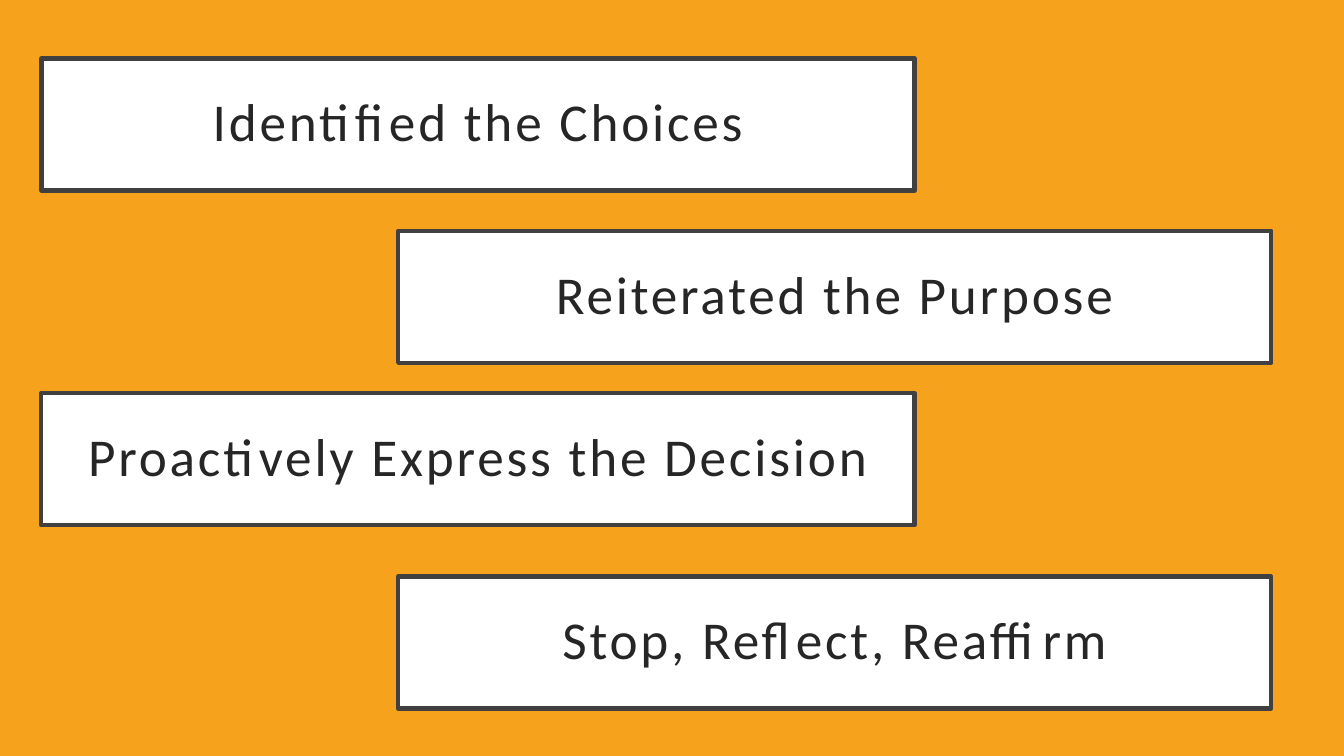
from pptx import Presentation
from pptx.dml.color import RGBColor
from pptx.enum.shapes import MSO_SHAPE
from pptx.enum.text import MSO_ANCHOR, MSO_AUTO_SIZE, PP_ALIGN
from pptx.util import Inches, Pt

ORANGE = RGBColor(0xF6, 0xA2, 0x1D)
WHITE = RGBColor(0xFF, 0xFF, 0xFF)
CHARCOAL = RGBColor(0x40, 0x40, 0x40)
INK = RGBColor(0x26, 0x26, 0x26)

LEFT_COLUMN, RIGHT_COLUMN = 3.08, 29.63
BOX_COLUMNS, BOX_ROWS = 64.97, 17.47
TITLE = ("Identified the Choices", LEFT_COLUMN, 7.73)
STEPS = [
    ("Reiterated the Purpose", RIGHT_COLUMN, 30.53),
    ("Proactively Express the Decision", LEFT_COLUMN, 52),
    ("Stop, Reflect, Reaffirm", RIGHT_COLUMN, 76.27),
]


class StepPage:
    """Draws outlined step boxes on a page grid of 100 columns by 100 rows."""

    def __init__(self, deck):
        """Add a title-only page with an orange background."""
        self.column = deck.slide_width / 100
        self.row = deck.slide_height / 100
        self.page = deck.slides.add_slide(deck.slide_layouts[5])
        self.page.background.fill.solid()
        self.page.background.fill.fore_color.rgb = ORANGE

    def title(self, text, column, row):
        """Place and format the title placeholder."""
        self.format_box(self.page.shapes.title, text, column, row)

    def step(self, text, column, row):
        """Add a step rectangle."""
        box = self.page.shapes.add_shape(MSO_SHAPE.RECTANGLE, 0, 0, 0, 0)
        box.shadow.inherit = False
        self.format_box(box, text, column, row)

    def format_box(self, box, text, column, row):
        """Give a box its place, outline and text."""
        box.left, box.top = round(column * self.column), round(row * self.row)
        box.width = round(BOX_COLUMNS * self.column)
        box.height = round(BOX_ROWS * self.row)
        box.fill.solid()
        box.fill.fore_color.rgb = WHITE
        box.line.color.rgb = CHARCOAL
        box.line.width = Pt(3)
        self.format_text(box.text_frame, text)

    def format_text(self, frame, text):
        """Set one centred, letter-spaced paragraph."""
        frame.text = text
        frame.word_wrap = True
        frame.auto_size = MSO_AUTO_SIZE.NONE
        frame.vertical_anchor = MSO_ANCHOR.MIDDLE
        frame.margin_left = frame.margin_right = Inches(0.3)
        frame.margin_top = frame.margin_bottom = Inches(0.2)
        para = frame.paragraphs[0]
        para.alignment = PP_ALIGN.CENTER
        para.line_spacing = 0.9
        para.font.name = "Calibri"
        para.font.size = Pt(38)
        para.font.color.rgb = INK
        para._p.get_or_add_pPr().get_or_add_defRPr().set("spc", "200")


def main():
    """Build and save the deck."""
    deck = Presentation()
    deck.slide_width, deck.slide_height = Inches(13.33), Inches(7.5)
    steps_page = StepPage(deck)
    steps_page.title(*TITLE)
    for step in STEPS:
        steps_page.step(*step)
    deck.save("out.pptx")


if __name__ == "__main__":
    main()
